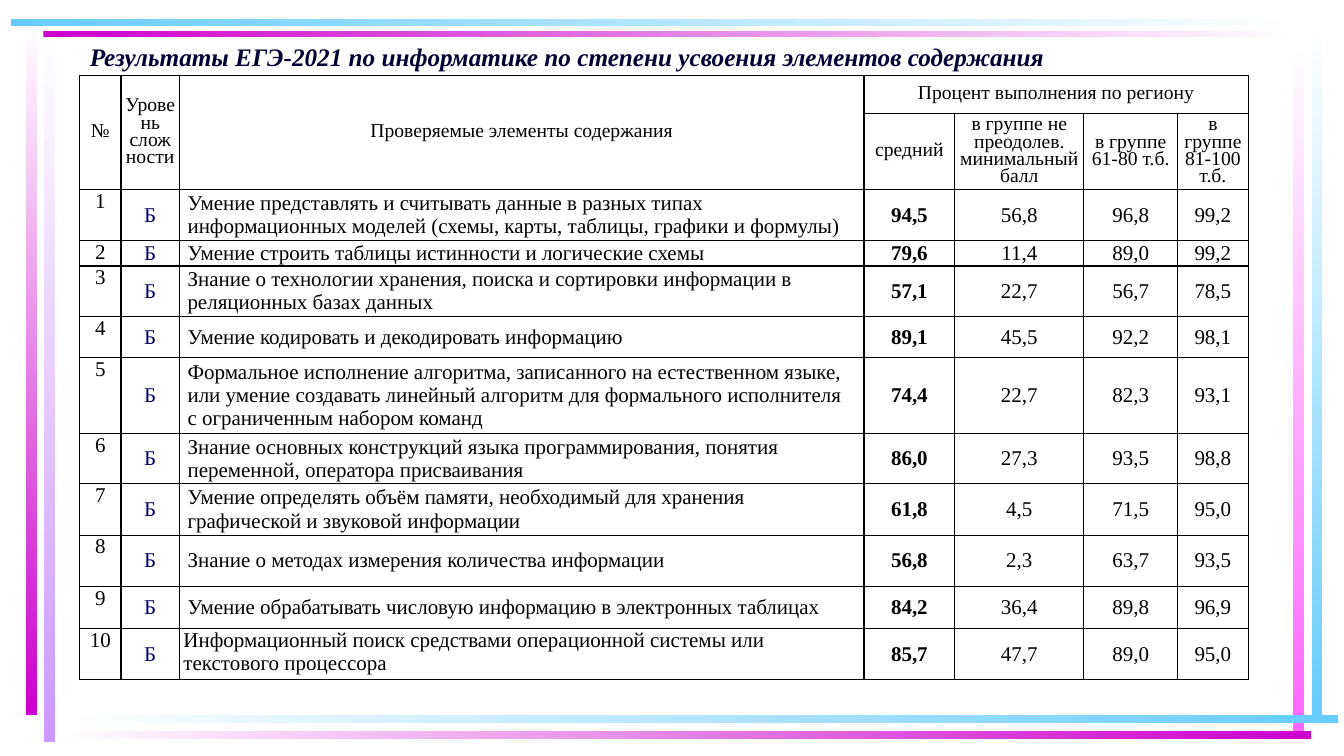
from lxml.etree import SubElement
from pptx import Presentation
from pptx.dml.color import RGBColor
from pptx.enum.shapes import MSO_SHAPE
from pptx.enum.text import MSO_ANCHOR, MSO_AUTO_SIZE, PP_ALIGN
from pptx.oxml.ns import qn
from pptx.util import Inches, Pt

TITLE = "Результаты ЕГЭ-2021 по информатике по степени усвоения элементов содержания"

# left, top, width, height, start colour, end colour
FRAME_BARS = [
    (0.44, 0.28, 0.11, 7.08, "FFFFFF", "CC99FF"),
    (0.26, 0.25, 0.11, 6.84, "FFFFFF", "CC00CC"),
    (13.01, 0.24, 0.1, 6.93, "FFFFFF", "66CCFF"),
    (12.82, 0.42, 0.11, 6.83, "FFFFFF", "FF66FF"),
    (0.6, 7.09, 12.67, 0.08, "FFFFFF", "66CCFF"),
    (0.6, 7.25, 12.4, 0.08, "FFFFFF", "CC00CC"),
    (0.43, 0.31, 12.43, 0.06, "CC00CC", "FFFFFF"),
    (0.11, 0.19, 12.75, 0.07, "66CCFF", "FFFFFF"),
]

COLUMN_WIDTHS = [0.41, 0.58, 6.79, 0.9, 1.28, 0.93, 0.7]
ROW_HEIGHTS = [0.38, 0.75, 0.51, 0.25, 0.5, 0.41, 0.75, 0.5, 0.51, 0.51, 0.42, 0.5]
HEADERS = ["№", "Уровень сложности", "Проверяемые элементы содержания",
           "Процент выполнения по региону"]
GROUP_HEADERS = ["средний", "в группе не преодолев. минимальный балл",
                 "в группе 61-80 т.б.", "в группе 81-100 т.б."]
LEVEL = "Б"
RESULTS = [
    ("Умение представлять и считывать данные в разных типах информационных моделей "
     "(схемы, карты, таблицы, графики и формулы)", "94,5", "56,8", "96,8", "99,2"),
    ("Умение строить таблицы истинности и логические схемы",
     "79,6", "11,4", "89,0", "99,2"),
    ("Знание о технологии хранения, поиска и сортировки информации в реляционных "
     "базах данных", "57,1", "22,7", "56,7", "78,5"),
    ("Умение кодировать и декодировать информацию", "89,1", "45,5", "92,2", "98,1"),
    ("Формальное исполнение алгоритма, записанного на естественном языке, или умение "
     "создавать линейный алгоритм для формального исполнителя с ограниченным набором "
     "команд", "74,4", "22,7", "82,3", "93,1"),
    ("Знание основных конструкций языка программирования, понятия переменной, "
     "оператора присваивания", "86,0", "27,3", "93,5", "98,8"),
    ("Умение определять объём памяти, необходимый для хранения графической и звуковой "
     "информации", "61,8", "4,5", "71,5", "95,0"),
    ("Знание о методах измерения количества информации", "56,8", "2,3", "63,7", "93,5"),
    ("Умение обрабатывать числовую информацию в электронных таблицах",
     "84,2", "36,4", "89,8", "96,9"),
    ("Информационный поиск средствами операционной системы или текстового процессора",
     "85,7", "47,7", "89,0", "95,0"),
]


def rgb(hex_code):
    return RGBColor.from_string(hex_code)


class SlideBuilder:
    """Holds the slide and its text and border style."""
    font_name = "Times New Roman"
    ink = "000000"
    border_width = Pt(1)

    def __init__(self, slide):
        self.slide = slide

    def format_text(self, frame, size, color=ink, bold=False, italic=False,
                    align=PP_ALIGN.LEFT, spacing=1.0):
        for paragraph in frame.paragraphs:
            paragraph.alignment = align
            paragraph.line_spacing = spacing
            for run in paragraph.runs:
                font = run.font
                font.name, font.size = self.font_name, Pt(size)
                font.bold, font.italic = bold, italic
                font.color.rgb = rgb(color)

    def title(self, wording, left, top, width, height):
        heading = self.slide.shapes.title
        heading.left, heading.top = Inches(left), Inches(top)
        heading.width, heading.height = Inches(width), Inches(height)
        frame = heading.text_frame
        frame.text = wording
        frame.word_wrap = True
        frame.auto_size = MSO_AUTO_SIZE.NONE
        frame.vertical_anchor = MSO_ANCHOR.BOTTOM
        self.format_text(frame, 18, "000033", bold=True, italic=True, spacing=0.8)

    def bar(self, left, top, width, height, start, end):
        """Adds a bar whose gradient runs along its longer side."""
        bar = self.slide.shapes.add_shape(
            MSO_SHAPE.RECTANGLE, Inches(left), Inches(top), Inches(width), Inches(height))
        bar.shadow.inherit = False
        bar.line.fill.background()
        bar.fill.gradient()
        bar.fill.gradient_angle = 270 if height > width else 0
        for stop, color in zip(bar.fill.gradient_stops, (start, end)):
            stop.color.rgb = rgb(color)

    def table(self, left, top, widths, heights):
        grid = self.slide.shapes.add_table(
            len(heights), len(widths), Inches(left), Inches(top),
            Inches(sum(widths)), Inches(sum(heights))).table
        grid.first_row = grid.horz_banding = False
        for column, width in zip(grid.columns, widths):
            column.width = Inches(width)
        for row, height in zip(grid.rows, heights):
            row.height = Inches(height)
        for cell in grid.iter_cells():
            self.border(cell)
            cell.fill.background()
        return grid

    def border(self, cell):
        properties = cell._tc.get_or_add_tcPr()
        for side in ("a:lnL", "a:lnR", "a:lnT", "a:lnB"):
            line = SubElement(properties, qn(side), w=str(self.border_width))
            fill = SubElement(line, qn("a:solidFill"))
            SubElement(fill, qn("a:srgbClr"), val=self.ink)

    def cell(self, cell, wording, size=15, inset=0.08, anchor=MSO_ANCHOR.MIDDLE,
             align=PP_ALIGN.CENTER, **style):
        cell.text_frame.text = wording
        cell.margin_left = cell.margin_right = Inches(inset)
        cell.margin_top = cell.margin_bottom = 0
        cell.vertical_anchor = anchor
        self.format_text(cell.text_frame, size, align=align, **style)


def fill_headers(builder, grid):
    for column in range(3):
        grid.cell(0, column).merge(grid.cell(1, column))
    grid.cell(0, 3).merge(grid.cell(0, 6))
    header_style = dict(size=14, inset=0.04, spacing=0.8)
    for column, header in enumerate(HEADERS):
        builder.cell(grid.cell(0, column), header, **header_style)
    for column, header in enumerate(GROUP_HEADERS, 3):
        builder.cell(grid.cell(1, column), header, **header_style)


def fill_results(builder, grid):
    top_style = dict(inset=0.04, anchor=MSO_ANCHOR.TOP)
    for number, (skill, *scores) in enumerate(RESULTS, 1):
        row = number + 1
        skill_style = top_style if number == len(RESULTS) else {}
        builder.cell(grid.cell(row, 0), str(number), **top_style)
        builder.cell(grid.cell(row, 1), LEVEL, color="000066")
        builder.cell(grid.cell(row, 2), skill, align=PP_ALIGN.LEFT, **skill_style)
        for column, score in enumerate(scores, 3):
            builder.cell(grid.cell(row, column), score, bold=column == 3)


def main():
    presentation = Presentation()
    presentation.slide_width = Inches(13.33)
    presentation.slide_height = Inches(7.5)
    title_only = presentation.slide_layouts[5]
    builder = SlideBuilder(presentation.slides.add_slide(title_only))
    for bar in FRAME_BARS:
        builder.bar(*bar)
    builder.title(TITLE, 0.79, 0.34, 11.33, 0.42)
    grid = builder.table(0.79, 0.75, COLUMN_WIDTHS, ROW_HEIGHTS)
    fill_headers(builder, grid)
    fill_results(builder, grid)
    presentation.save("out.pptx")


if __name__ == "__main__":
    main()
